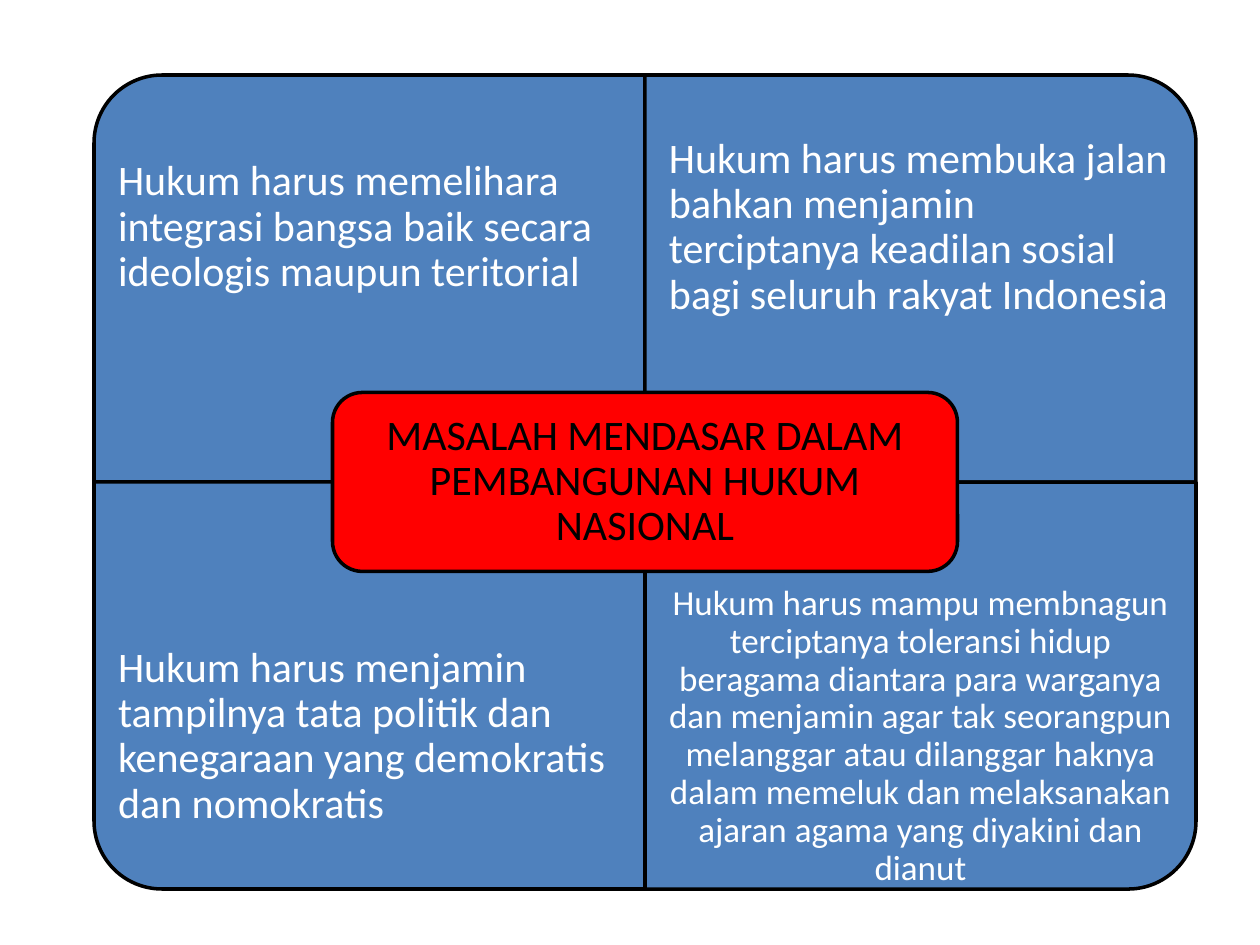
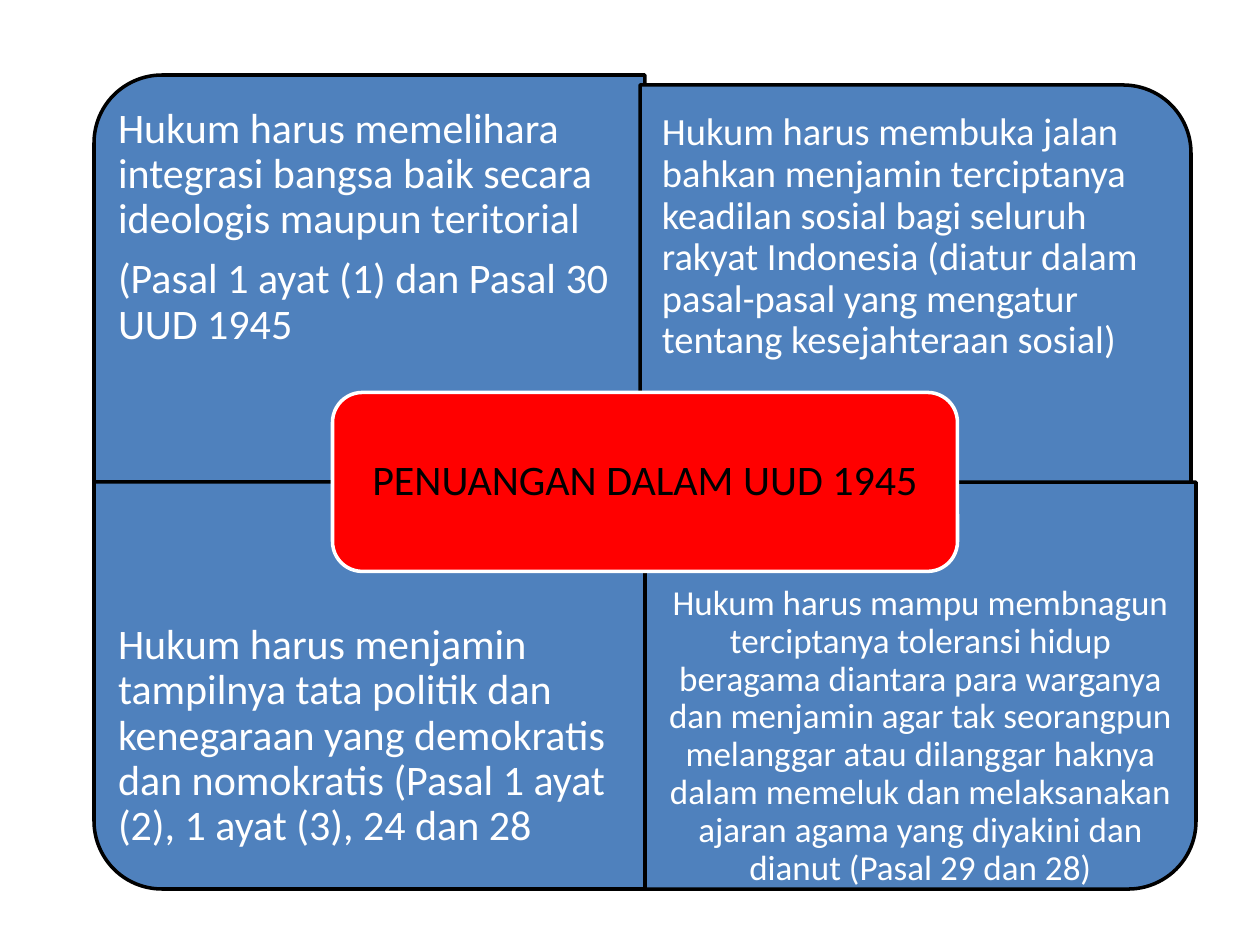
from pptx import Presentation
from pptx.dml.color import RGBColor
from pptx.enum.shapes import MSO_SHAPE as SHAPE
from pptx.enum.text import MSO_ANCHOR as ANCHOR, PP_ALIGN as ALIGN
from pptx.util import Pt

EMU_PER_PX = 914400 / 126
FONT = "Calibri"
COLORS = {"quadrant": "4F81BD", "center": "FF0000", "dark": "000000", "light": "FFFFFF"}
MATRIX_BOX = (94, 75, 1102, 814)
CENTER_SIZE = (625, 179)
ROTATIONS = (270, 0, 180, 90)

INTEGRATION = "Hukum harus memelihara integrasi bangsa baik secara ideologis maupun teritorial"
JUSTICE = ("Hukum harus membuka jalan bahkan menjamin terciptanya keadilan sosial "
           "bagi seluruh rakyat Indonesia")
DEMOCRACY = ("Hukum harus menjamin tampilnya tata politik dan kenegaraan yang demokratis "
             "dan nomokratis")
TOLERANCE = ("Hukum harus mampu membnagun terciptanya toleransi hidup beragama diantara "
             "para warganya dan menjamin agar tak seorangpun melanggar atau dilanggar "
             "haknya dalam memeluk dan melaksanakan ajaran agama yang diyakini dan dianut")

SLIDES = [
    {
        "center": "MASALAH MENDASAR DALAM PEMBANGUNAN HUKUM NASIONAL",
        "center_line": "dark",
        "quadrants": [
            (INTEGRATION, 24, ALIGN.LEFT, (0, 0)),
            (JUSTICE, 24, ALIGN.LEFT, (0, 0)),
            (DEMOCRACY, 24, ALIGN.LEFT, (0, 0)),
            (TOLERANCE, 20, ALIGN.CENTER, (0, 0)),
        ],
    },
    {
        "center": "PENUANGAN DALAM UUD 1945",
        "center_line": "light",
        "quadrants": [
            (INTEGRATION + "\n(Pasal 1 ayat (1) dan Pasal 30 UUD 1945", 24, ALIGN.LEFT, (0, 0)),
            (JUSTICE + " (diatur dalam pasal-pasal yang mengatur tentang kesejahteraan sosial)",
             22, ALIGN.LEFT, (-5, 10)),
            (DEMOCRACY + " (Pasal 1 ayat (2), 1 ayat (3), 24 dan 28", 24, ALIGN.LEFT, (0, 0)),
            (TOLERANCE + " (Pasal 29 dan 28)", 20, ALIGN.CENTER, (0, 0)),
        ],
    },
]


def px(n):
    return round(n * EMU_PER_PX)


def rgb(name):
    return RGBColor.from_string(COLORS[name])


def add_block(slide, kind, box, fill, line):
    sp = slide.shapes.add_shape(kind, *map(px, box))
    sp.shadow.inherit = False
    sp.fill.solid()
    sp.fill.fore_color.rgb = rgb(fill)
    sp.line.color.rgb = rgb(line)
    sp.line.width = Pt(2)
    return sp


def write_text(sp, text, size, color, align, inset):
    tf = sp.text_frame
    tf.text = text
    tf.word_wrap = True
    tf.vertical_anchor = ANCHOR.MIDDLE
    tf.margin_left = tf.margin_right = tf.margin_top = tf.margin_bottom = px(inset)
    for p in tf.paragraphs:
        p.alignment = align
        p.line_spacing = 0.9
        p.space_after = Pt(size * 0.35)
        for r in p.runs:
            r.font.name = FONT
            r.font.size = Pt(size)
            r.font.color.rgb = rgb(color)


def add_quadrant(slide, box, rotation, at_bottom, text, size, align):
    x, y, w, h = box
    sw, sh = (h, w) if rotation % 180 else (w, h)
    block = (x + (w - sw) / 2, y + (h - sh) / 2, sw, sh)
    sp = add_block(slide, SHAPE.ROUND_1_RECTANGLE, block, "quadrant", "dark")
    sp.rotation = rotation
    text_h = h * 3 // 4
    text_y = y + h - text_h if at_bottom else y
    label = slide.shapes.add_textbox(px(x), px(text_y), px(w), px(text_h))
    write_text(label, text, size, "light", align, inset=size)


def add_center(slide, box, text, line):
    x, y, w, h = box
    cw, ch = CENTER_SIZE
    center = (x + (w - cw) / 2, y + (h - ch) / 2, cw, ch)
    sp = add_block(slide, SHAPE.ROUNDED_RECTANGLE, center, "center", line)
    write_text(sp, text, 24, "dark", ALIGN.CENTER, inset=12)


def add_matrix(slide, box, content):
    x, y, w, h = box
    qw, qh = w // 2, h // 2
    for i, (text, size, align, (dx, dy)) in enumerate(content["quadrants"]):
        row, col = divmod(i, 2)
        quadrant = (x + col * qw + dx, y + row * qh + dy, qw, qh)
        add_quadrant(slide, quadrant, ROTATIONS[i], row == 1, text, size, align)
    add_center(slide, box, content["center"], content["center_line"])


def main():
    prs = Presentation()
    prs.slide_width, prs.slide_height = px(1260), px(945)
    blank = prs.slide_layouts[6]
    for content in SLIDES:
        add_matrix(prs.slides.add_slide(blank), MATRIX_BOX, content)
    prs.save("out.pptx")


if __name__ == "__main__":
    main()
